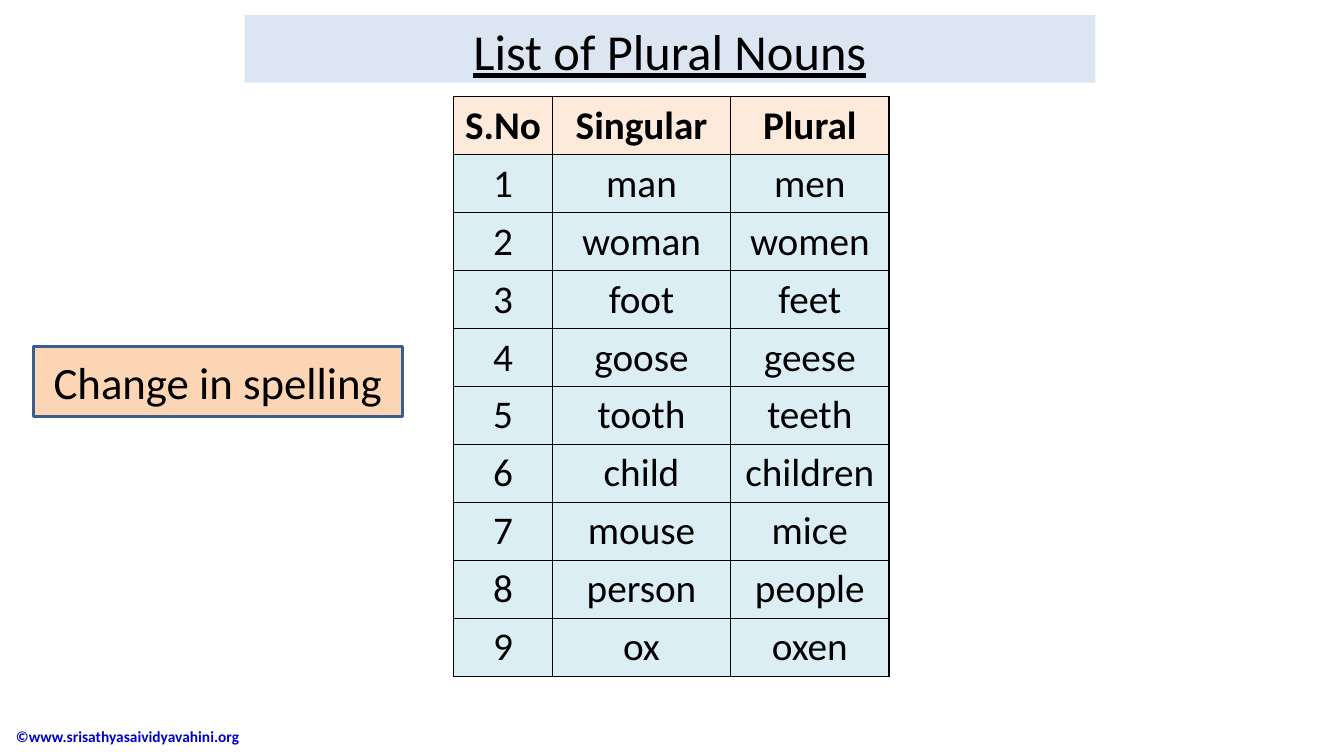
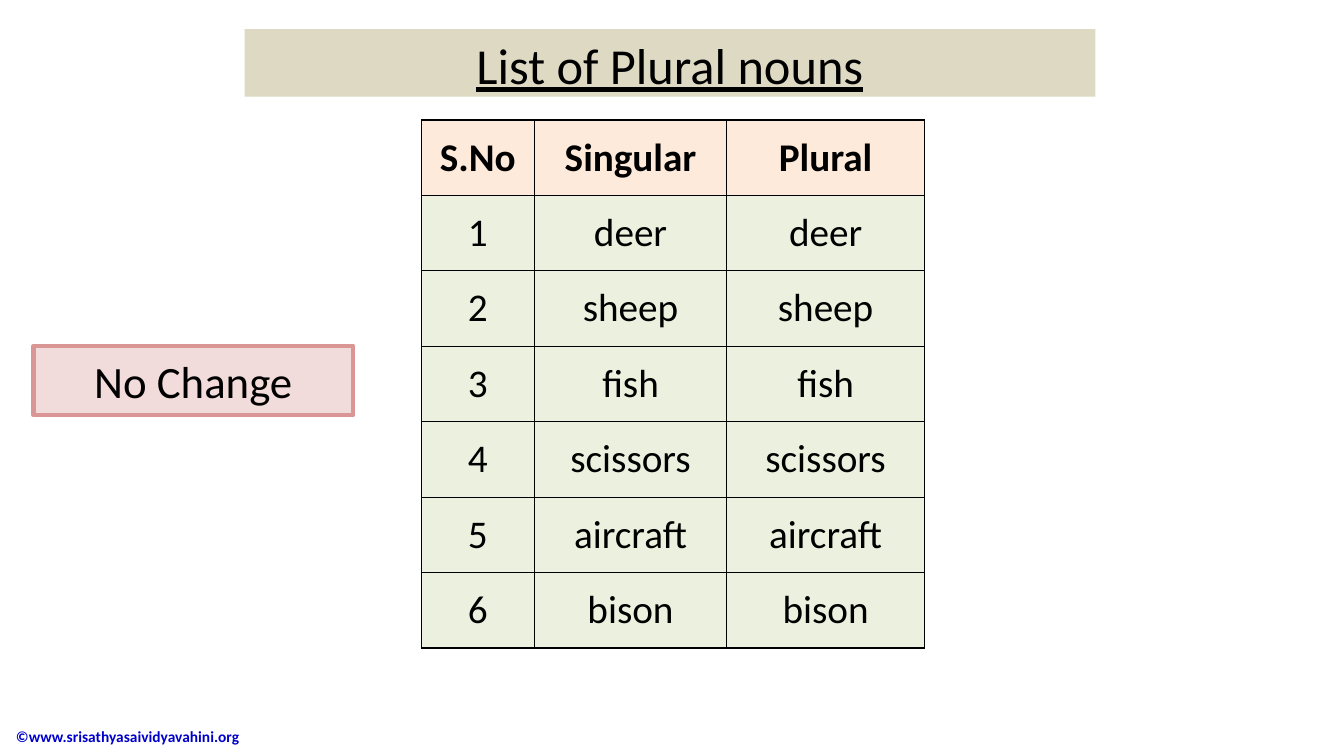
"""Build two slides listing irregular plural nouns."""
from lxml import etree
from pptx import Presentation
from pptx import util as u
from pptx.dml.color import RGBColor
from pptx.enum import shapes, text
from pptx.oxml.ns import qn

COLORS = {
    "ink": "000000", "footer": "0000CC", "header": "FDEADA",
    "blue band": "DCE6F2", "tan band": "DDD9C3",
    "aqua cell": "DBEEF4", "green cell": "EBF1DE",
    "orange label": "FCD5B5", "navy edge": "3A5F8C",
    "pink label": "F2DCDB", "rose edge": "D99694",
}
HEADINGS = ("S.No", "Singular", "Plural")


def rgb(name):
    """Return the named colour."""
    return RGBColor.from_string(COLORS[name])


class Deck:
    """Hold the style and current slide; lengths are percent of the slide."""

    font = "Calibri"

    def __init__(self):
        self.prs = Presentation()
        self.prs.slide_width, self.prs.slide_height = u.Inches(13.33), u.Inches(7.5)
        self.slide = None

    def x(self, share):
        """Convert a percentage of the width."""
        return round(self.prs.slide_width * share / 100)

    def y(self, share):
        """Convert a percentage of the height."""
        return round(self.prs.slide_height * share / 100)

    def box(self, left, top, width, height):
        """Convert a box of percentages."""
        return self.x(left), self.y(top), self.x(width), self.y(height)

    def set_words(self, frame, words, size, color="ink", bold=False,
                  underline=False, align=text.PP_ALIGN.CENTER):
        """Put one styled paragraph into a text frame."""
        frame.text = words
        paragraph = frame.paragraphs[0]
        paragraph.alignment = align
        font = paragraph.runs[0].font
        font.name, font.size = self.font, u.Pt(size)
        font.bold, font.underline = bold, underline
        font.color.rgb = rgb(color)

    def panel(self, words, box, fill, size, anchor, edge=None, weight=0, underline=False):
        """Add a filled rectangle with centred text."""
        panel = self.slide.shapes.add_shape(shapes.MSO_SHAPE.RECTANGLE, *self.box(*box))
        panel.shadow.inherit = False
        panel.fill.solid()
        panel.fill.fore_color.rgb = rgb(fill)
        if edge:
            panel.line.color.rgb = rgb(edge)
            panel.line.width = u.Pt(weight)
        else:
            panel.line.fill.background()
        panel.text_frame.vertical_anchor = anchor
        self.set_words(panel.text_frame, words, size, underline=underline)

    def start(self, title, top, band):
        """Begin a slide with its title band and footer."""
        self.slide = self.prs.slides.add_slide(self.prs.slide_layouts[6])
        footer = self.slide.shapes.add_textbox(*self.box(0.45, 94.67, 26.25, 5.33)).text_frame
        footer.word_wrap = True
        footer.vertical_anchor = text.MSO_ANCHOR.MIDDLE
        self.set_words(footer, "©www.srisathyasaividyavahini.org", 11, "footer",
                       bold=True, align=text.PP_ALIGN.LEFT)
        self.panel(title, (18.2, top, 63.3, 8.93), band, 36,
                   text.MSO_ANCHOR.TOP, underline=True)

    def label(self, words, top, width, fill, edge, weight):
        """Add the outlined rule name at the left."""
        self.panel(words, (2.5, top, width, 9.2), fill, 32,
                   text.MSO_ANCHOR.MIDDLE, edge, weight)

    def border(self, cell):
        """Draw a thin line on every side of a cell."""
        properties = cell._tc.get_or_add_tcPr()
        for side in ("lnL", "lnR", "lnT", "lnB"):
            line = etree.SubElement(properties, qn(f"a:{side}"), w=str(u.Pt(1)))
            fill = etree.SubElement(line, qn("a:solidFill"))
            etree.SubElement(fill, qn("a:srgbClr"), val=COLORS["ink"])

    def nouns(self, pairs, left, top, widths, row_height, fill):
        """Add a numbered table of singular and plural nouns."""
        rows = [HEADINGS] + [(str(n), *pair) for n, pair in enumerate(pairs, 1)]
        table = self.slide.shapes.add_table(
            len(rows), len(widths),
            *self.box(left, top, sum(widths), row_height * len(rows))).table
        for column, width in zip(table.columns, widths):
            column.width = self.x(width)
        for r, words in enumerate(rows):
            table.rows[r].height = self.y(row_height)
            for c, word in enumerate(words):
                cell = table.cell(r, c)
                self.border(cell)
                cell.fill.solid()
                cell.fill.fore_color.rgb = rgb(fill if r else "header")
                cell.vertical_anchor = text.MSO_ANCHOR.MIDDLE
                self.set_words(cell.text_frame, word, 28, bold=r == 0)


def main():
    """Build and save both slides."""
    deck = Deck()

    deck.start("List of Plural Nouns", 2, "blue band")
    changed = [("man", "men"), ("woman", "women"), ("foot", "feet"),
               ("goose", "geese"), ("tooth", "teeth"), ("child", "children"),
               ("mouse", "mice"), ("person", "people"), ("ox", "oxen")]
    deck.nouns(changed, 33.75, 12.8, (7.35, 13.27, 11.78), 7.67, "aqua cell")
    deck.label("Change in spelling", 45.87, 27.45, "orange label", "navy edge", 2)

    deck.start("List of Plural nouns", 3.87, "tan band")
    deck.label("No Change", 45.73, 23.78, "pink label", "rose edge", 3)
    unchanged = ("deer", "sheep", "fish", "scissors", "aircraft", "bison")
    deck.nouns(zip(unchanged, unchanged), 31.35, 15.87, (8.4, 14.33, 14.7), 9.98, "green cell")

    deck.prs.save("out.pptx")


if __name__ == "__main__":
    main()
